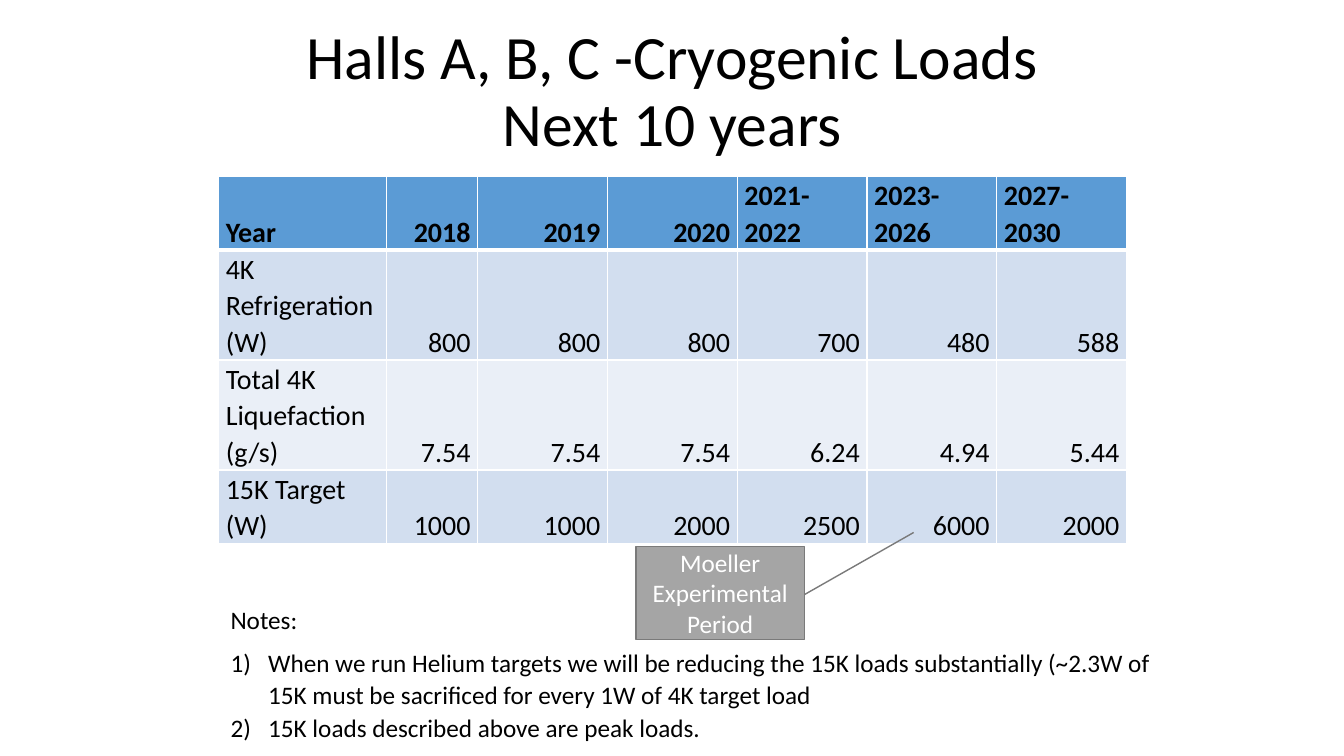
from dataclasses import dataclass

from lxml import etree
from pptx import Presentation
from pptx import util as u
from pptx.dml.color import RGBColor
from pptx.enum import shapes, text
from pptx.oxml.ns import qn


@dataclass(frozen=True)
class Theme:
    font: str = "Calibri"
    ink: str = "000000"
    paper: str = "FFFFFF"
    header: str = "5B9BD5"
    bands: tuple = ("D2DEEF", "EAEFF7")
    callout: str = "A5A5A5"
    callout_line: str = "7A7A7A"
    title_size: int = 44
    table_size: int = 20
    note_size: int = 18
    spacing: float = 1.07


LOADS = [
    ("Year", "2018", "2019", "2020", "2021-2022", "2023-2026", "2027-2030"),
    ("4K Refrigeration (W)", "800", "800", "800", "700", "480", "588"),
    ("Total 4K Liquefaction (g/s)", "7.54", "7.54", "7.54", "6.24", "4.94", "5.44"),
    ("15K Target (W)", "1000", "1000", "2000", "2500", "6000", "2000"),
]
COLUMN_WIDTHS = [4.24, 2.29] + [3.27] * 5
ROW_HEIGHTS = [1.8, 2.77, 2.77, 1.85]
NOTES = [
    "When we run Helium targets we will be reducing the 15K loads substantially "
    "(~2.3W of 15K must be sacrificed for every 1W of 4K target load",
    "15K loads described above are peak loads.",
]


class LoadsSlide:
    """Builds the cryogenic loads slide from a theme."""

    def __init__(self, deck, theme):
        self.theme = theme
        self.page = deck.slides.add_slide(deck.slide_layouts[5])

    def place(self, shape, left, top, width, height):
        shape.left, shape.top = u.Cm(left), u.Cm(top)
        shape.width, shape.height = u.Cm(width), u.Cm(height)

    def style(self, para, size, color, align=text.PP_ALIGN.LEFT, spacing=1.0, bold=False):
        para.alignment = align
        para.line_spacing = spacing
        para.font.name = self.theme.font
        para.font.size = u.Pt(size)
        para.font.bold = bold
        para.font.color.rgb = RGBColor.from_string(color)

    def title(self, words, *area):
        box = self.page.shapes.title
        self.place(box, *area)
        frame = box.text_frame
        frame.text = words
        frame.auto_size = text.MSO_AUTO_SIZE.NONE
        frame.vertical_anchor = text.MSO_ANCHOR.MIDDLE
        self.style(frame.paragraphs[0], self.theme.title_size, self.theme.ink,
                   text.PP_ALIGN.CENTER, 0.9)

    def borders(self, cell, top, bottom):
        properties = cell._tc.get_or_add_tcPr()
        for side, points in (("L", 1), ("R", 1), ("T", top), ("B", bottom)):
            line = etree.SubElement(properties, qn(f"a:ln{side}"), w=str(u.Pt(points)))
            fill = etree.SubElement(line, qn("a:solidFill"))
            etree.SubElement(fill, qn("a:srgbClr"), val=self.theme.paper)

    def cell(self, cell, words, row, column):
        header = row == 0
        self.borders(cell, 3 if row == 1 else 1, 3 if header else 1)
        cell.fill.solid()
        band = self.theme.header if header else self.theme.bands[(row - 1) % 2]
        cell.fill.fore_color.rgb = RGBColor.from_string(band)
        cell.margin_left = cell.margin_right = u.Cm(0.18)
        cell.margin_top = cell.margin_bottom = 0
        cell.vertical_anchor = text.MSO_ANCHOR.BOTTOM
        cell.text = words
        left = column == 0 or "-" in words
        align = text.PP_ALIGN.LEFT if left else text.PP_ALIGN.RIGHT
        self.style(cell.text_frame.paragraphs[0], self.theme.table_size, self.theme.ink,
                   align, self.theme.spacing, header)

    def table(self, rows, widths, heights, left, top):
        table = self.page.shapes.add_table(
            len(rows), len(widths), u.Cm(left), u.Cm(top),
            u.Cm(sum(widths)), u.Cm(sum(heights))).table
        for column, width in zip(table.columns, widths):
            column.width = u.Cm(width)
        for row, height in zip(table.rows, heights):
            row.height = u.Cm(height)
        for i, values in enumerate(rows):
            for j, words in enumerate(values):
                self.cell(table.cell(i, j), words, i, j)

    def number(self, para):
        properties = para._p.get_or_add_pPr()
        properties.set("marL", str(u.Cm(0.95)))
        properties.set("indent", str(u.Cm(-0.95)))
        etree.SubElement(properties, qn("a:buFont"), typeface=self.theme.font)
        etree.SubElement(properties, qn("a:buAutoNum"), type="arabicParenR")

    def notes(self, heading, items, *area):
        frame = self.page.shapes.add_textbox(*map(u.Cm, area)).text_frame
        frame.word_wrap = True
        frame.text = "\n".join([heading, *items])
        for para in frame.paragraphs:
            self.style(para, self.theme.note_size, self.theme.ink,
                       spacing=self.theme.spacing)
        for para in frame.paragraphs[1:]:
            para.space_after = u.Pt(0)
            self.number(para)
        for para in (frame.paragraphs[0], frame.paragraphs[-1]):
            para.space_after = u.Pt(8)

    def callout(self, words, pointer, *area):
        box = self.page.shapes.add_shape(
            shapes.MSO_SHAPE.LINE_CALLOUT_1, *map(u.Cm, area))
        box.shadow.inherit = False
        for index, value in enumerate(pointer):
            box.adjustments[index] = value
        box.fill.solid()
        box.fill.fore_color.rgb = RGBColor.from_string(self.theme.callout)
        box.line.color.rgb = RGBColor.from_string(self.theme.callout_line)
        box.line.width = u.Pt(1)
        frame = box.text_frame
        frame.word_wrap = True
        frame.vertical_anchor = text.MSO_ANCHOR.MIDDLE
        frame.text = words
        self.style(frame.paragraphs[0], self.theme.note_size, self.theme.paper,
                   text.PP_ALIGN.CENTER)


def main():
    deck = Presentation()
    deck.slide_width, deck.slide_height = u.Cm(33.87), u.Cm(19.05)
    slide = LoadsSlide(deck, Theme())
    slide.title("Halls A, B, C -Cryogenic Loads\vNext 10 years", 6.05, 0.51, 21.79, 3.68)
    slide.table(LOADS, COLUMN_WIDTHS, ROW_HEIGHTS, 5.51, 4.45)
    slide.notes("Notes:", NOTES, 5.56, 15.04, 23.98, 3.84)
    slide.callout("Moeller Experimental Period", (0.52, 1.0, -0.15, 1.65),
                  16.03, 13.77, 4.24, 2.34)
    deck.save("out.pptx")


if __name__ == "__main__":
    main()
